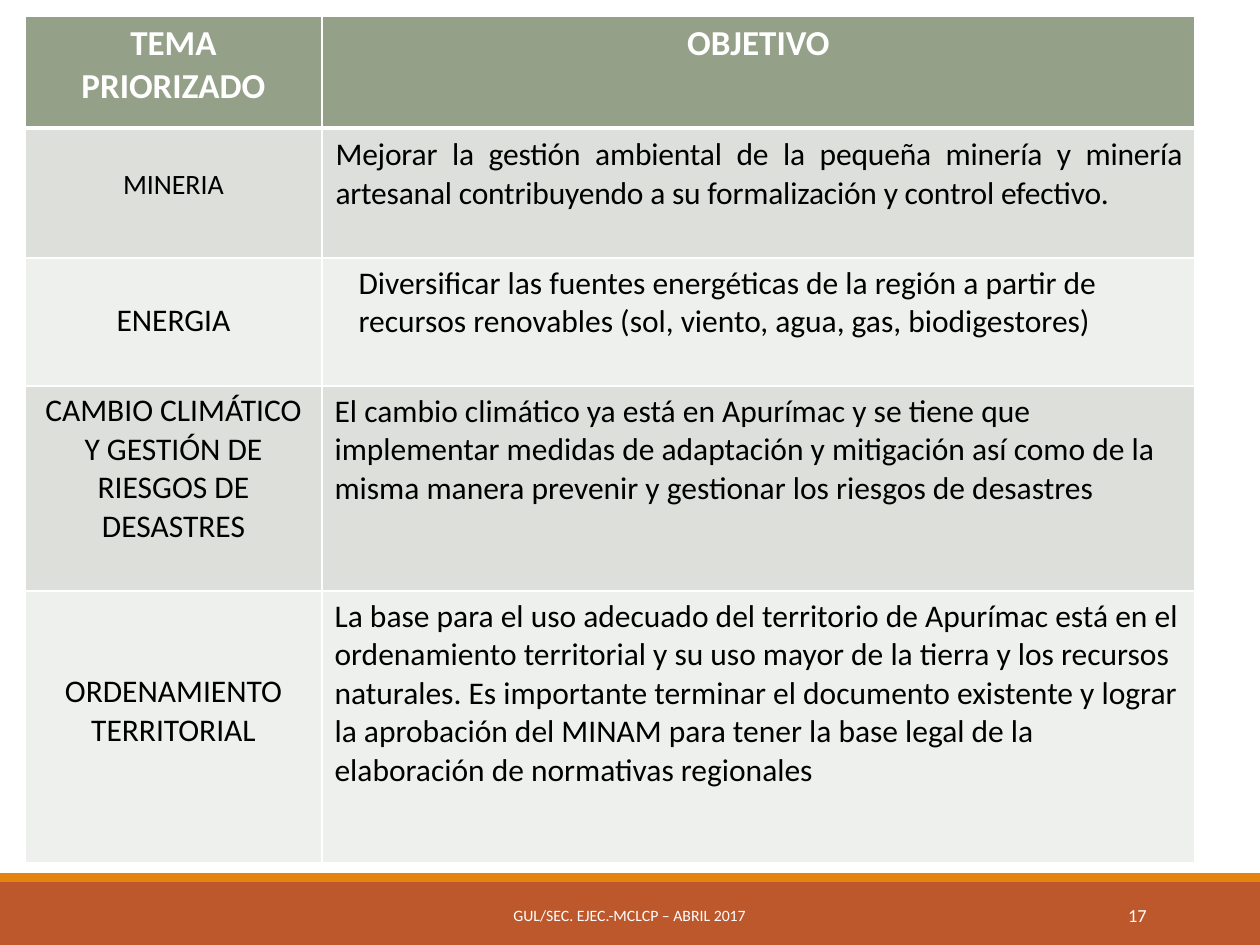
from dataclasses import dataclass

import lxml.etree
import pptx
import pptx.dml.color
import pptx.enum.shapes
import pptx.enum.text
import pptx.oxml.ns
import pptx.util

ALIGN = pptx.enum.text.PP_ALIGN
EMU_PER_PX = 914400 / 126


@dataclass(frozen=True)
class Theme:
    font: str = "Calibri"
    header: str = "94A088"
    bands: tuple = ("DCDFDA", "EEF0ED")
    text: str = "000000"
    light: str = "FFFFFF"
    footer: str = "BD582C"
    stripe: str = "E48312"
    header_size: float = 20
    body_size: float = 18
    small_size: float = 16
    footer_size: float = 9
    number_size: float = 10.5
    rule: int = 1
    header_rule: int = 3


THEME = Theme()

COLUMN_WIDTHS = (297, 873)
ROW_HEIGHTS = (112, 130, 128, 205, 272)
HEADINGS = ("TEMA PRIORIZADO", "OBJETIVO")

# Each topic: name paragraphs, name size, name top margin,
# objective paragraphs, objective format
TOPICS = (
    (("MINERIA",), THEME.small_size, 40,
     ("Mejorar la gestión ambiental de la pequeña minería y minería artesanal "
      "contribuyendo a su formalización y control efectivo.",),
     dict(align=ALIGN.JUSTIFY, indent=1, line_spacing=1.02, tracking=-10)),
    (("ENERGIA",), THEME.body_size, 44,
     ("Diversificar las fuentes energéticas de la región a partir de recursos "
      "renovables (sol, viento, agua, gas, biodigestores)",),
     dict(indent=24)),
    (("CAMBIO CLIMÁTICO Y GESTIÓN DE RIESGOS DE", "DESASTRES"), THEME.body_size, 6,
     ("El cambio climático ya está en Apurímac y se tiene que implementar medidas "
      "de adaptación y mitigación así como de la misma manera prevenir y gestionar "
      "los riesgos de desastres",),
     {}),
    (("ORDENAMIENTO TERRITORIAL",), THEME.body_size, 82,
     ("La base para el uso adecuado del territorio de Apurímac está en el",
      "ordenamiento territorial y su uso mayor de la tierra y los recursos naturales. "
      "Es importante terminar el documento existente y lograr la aprobación del MINAM "
      "para tener la base legal de la elaboración de normativas regionales"),
     {}),
)


def px(length):
    return pptx.util.Emu(round(length * EMU_PER_PX))


def rgb(colour):
    return pptx.dml.color.RGBColor.from_string(colour)


def write(frame, paragraphs, size, colour, align=ALIGN.LEFT, bold=False,
          indent=0, line_spacing=None, tracking=None):
    """Fill a text frame; tracking is in hundredths of a point."""
    frame.word_wrap = True
    for index, wording in enumerate(paragraphs):
        paragraph = frame.add_paragraph() if index else frame.paragraphs[0]
        paragraph.alignment = align
        if line_spacing:
            paragraph.line_spacing = line_spacing
        if indent:
            properties = paragraph._p.get_or_add_pPr()
            properties.set("marL", str(px(indent)))
            properties.set("indent", "0")
        run = paragraph.add_run()
        run.text = wording
        run.font.name = THEME.font
        run.font.size = pptx.util.Pt(size)
        run.font.bold = bold
        run.font.color.rgb = rgb(colour)
        if tracking:
            run._r.get_or_add_rPr().set("spc", str(tracking))


def style_cell(cell, fill, top_rule, bottom_rule):
    cell.fill.solid()
    cell.fill.fore_color.rgb = rgb(fill)
    properties = cell._tc.get_or_add_tcPr()
    sides = (("lnL", THEME.rule), ("lnR", THEME.rule),
             ("lnT", top_rule), ("lnB", bottom_rule))
    for position, (side, width) in enumerate(sides):
        line = lxml.etree.Element(pptx.oxml.ns.qn(f"a:{side}"),
                                  w=str(pptx.util.Pt(width)))
        solid = lxml.etree.SubElement(line, pptx.oxml.ns.qn("a:solidFill"))
        lxml.etree.SubElement(solid, pptx.oxml.ns.qn("a:srgbClr"), val=THEME.light)
        properties.insert(position, line)


def add_topics_table(slide, left, top):
    table = slide.shapes.add_table(
        len(ROW_HEIGHTS), len(COLUMN_WIDTHS), px(left), px(top),
        px(sum(COLUMN_WIDTHS)), px(sum(ROW_HEIGHTS))).table
    for column, width in zip(table.columns, COLUMN_WIDTHS):
        column.width = px(width)
    for row, height in zip(table.rows, ROW_HEIGHTS):
        row.height = px(height)

    for column, heading in enumerate(HEADINGS):
        cell = table.cell(0, column)
        style_cell(cell, THEME.header, THEME.rule, THEME.header_rule)
        write(cell.text_frame, (heading,), THEME.header_size, THEME.light,
              ALIGN.CENTER, bold=True)

    for row, (name, name_size, name_top, objective, layout) in enumerate(TOPICS, 1):
        name_cell, objective_cell = table.cell(row, 0), table.cell(row, 1)
        for cell in (name_cell, objective_cell):
            style_cell(cell, THEME.bands[(row - 1) % 2],
                       THEME.header_rule if row == 1 else THEME.rule, THEME.rule)
        name_cell.margin_top = px(name_top)
        write(name_cell.text_frame, name, name_size, THEME.text, ALIGN.CENTER)
        write(objective_cell.text_frame, objective, THEME.body_size, THEME.text,
              **layout)


def add_band(slide, left, top, width, height, colour):
    band = slide.shapes.add_shape(pptx.enum.shapes.MSO_SHAPE.RECTANGLE,
                                  px(left), px(top), px(width), px(height))
    band.shadow.inherit = False
    band.fill.solid()
    band.fill.fore_color.rgb = rgb(colour)
    band.line.fill.background()


def add_footer(slide, left, top, width, height):
    stripe_height = 9
    add_band(slide, left, top + stripe_height, width, height - stripe_height,
             THEME.footer)
    add_band(slide, left, top, width, stripe_height, THEME.stripe)
    labels = (
        (380, 499, "GUL/SEC. EJEC.-MCLCP – ABRIL 2017", THEME.footer_size, ALIGN.CENTER),
        (1023, 136, "17", THEME.number_size, ALIGN.RIGHT),
    )
    for offset, label_width, wording, size, align in labels:
        label = slide.shapes.add_textbox(px(left + offset), px(top + 17),
                                         px(label_width), px(50)).text_frame
        label.vertical_anchor = pptx.enum.text.MSO_ANCHOR.MIDDLE
        write(label, (wording,), size, THEME.light, align)


def main():
    presentation = pptx.Presentation()
    presentation.slide_width = px(1260)
    presentation.slide_height = px(945)
    slide = presentation.slides.add_slide(presentation.slide_layouts[6])
    add_footer(slide, 0, 873, 1260, 72)
    add_topics_table(slide, 25, 16)
    presentation.save("out.pptx")


if __name__ == "__main__":
    main()
